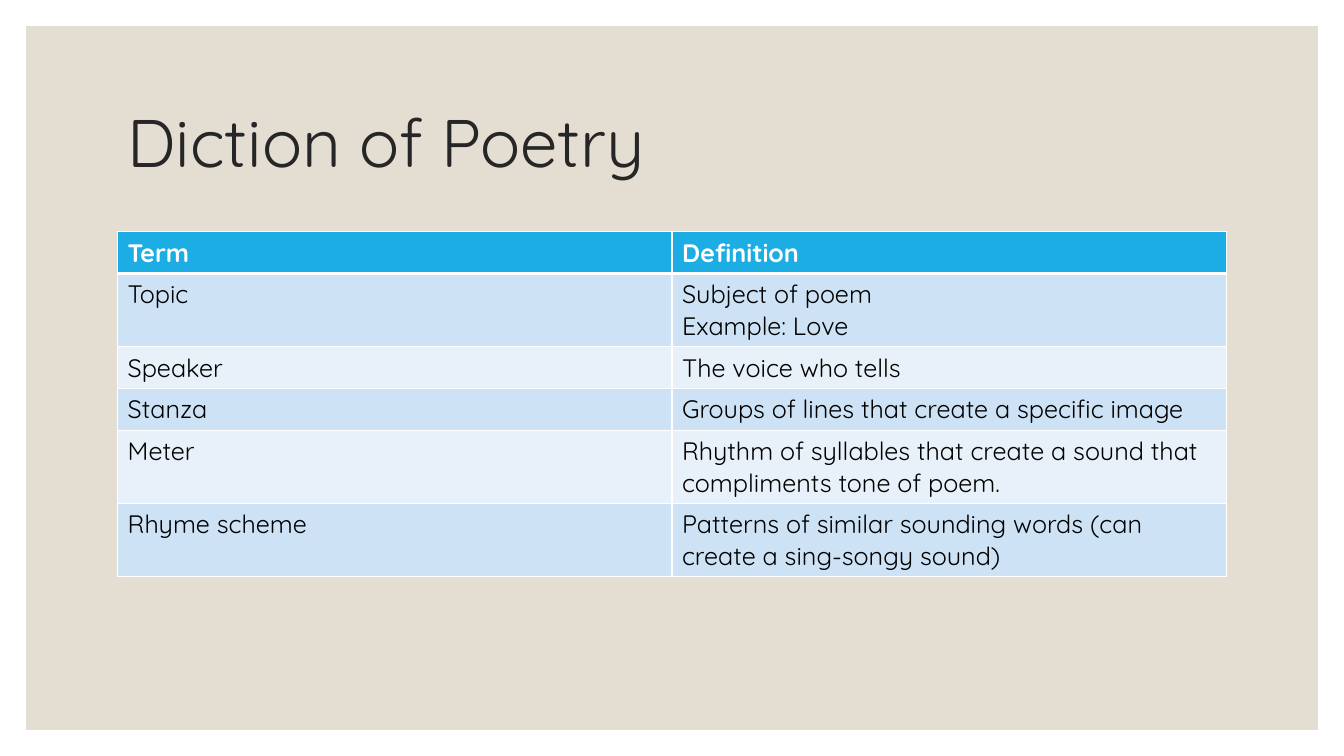
from lxml.etree import SubElement
from pptx import Presentation
from pptx.dml.color import RGBColor
from pptx.enum.shapes import MSO_SHAPE
from pptx.enum.text import MSO_ANCHOR, MSO_AUTO_SIZE, PP_ALIGN
from pptx.oxml.ns import qn
from pptx.util import Pt

FONT = "Quicksand"
WHITE = RGBColor(0xFF, 0xFF, 0xFF)
BLACK = RGBColor(0, 0, 0)
SAND = RGBColor(0xE3, 0xDE, 0xD1)
CHARCOAL = RGBColor(0x26, 0x26, 0x26)
BLUE = RGBColor(0x1C, 0xAD, 0xE4)
BAND_DARK = RGBColor(0xCD, 0xE3, 0xF5)
BAND_LIGHT = RGBColor(0xE8, 0xF1, 0xFA)

SLIDE_W, SLIDE_H = 960, 540
MARGIN = 18.7
LEFT, WIDTH = 84, 792
ROW_H = 29.2

# Each cell is a list of paragraphs
ROWS = [
    (["Term"], ["Definition"]),
    (["Topic"], ["Subject of poem", "Example: Love"]),
    (["Speaker"], ["The voice who tells"]),
    (["Stanza"], ["Groups of lines that create a specific image"]),
    (["Meter"], ["Rhythm of syllables that create a sound that "
                 "compliments tone of poem."]),
    (["Rhyme scheme"], ["Patterns of similar sounding words "
                        "(can create a sing-songy sound)"]),
]


def add_run(p, text, size, color, bold=False):
    r = p.add_run()
    r.text = text
    r.font.name = FONT
    r.font.size = Pt(size)
    r.font.bold = bold
    r.font.color.rgb = color


def add_panel(s):
    panel = s.shapes.add_shape(
        MSO_SHAPE.RECTANGLE, Pt(MARGIN), Pt(MARGIN),
        Pt(SLIDE_W - 2 * MARGIN), Pt(SLIDE_H - 2 * MARGIN))
    panel.shadow.inherit = False
    panel.fill.solid()
    panel.fill.fore_color.rgb = SAND
    panel.line.fill.background()
    # Place the panel behind the title
    s.shapes.title.element.addprevious(panel.element)


def set_title(s, text):
    title = s.shapes.title
    title.left, title.top = Pt(LEFT), Pt(50.4)
    title.width, title.height = Pt(WIDTH), Pt(108)
    tf = title.text_frame
    tf.auto_size = MSO_AUTO_SIZE.NONE
    tf.word_wrap = True
    tf.vertical_anchor = MSO_ANCHOR.MIDDLE
    p = tf.paragraphs[0]
    p.alignment = PP_ALIGN.LEFT
    p.line_spacing = 0.9
    add_run(p, text, 48, CHARCOAL)


def set_borders(cell, top, bottom):
    tc_pr = cell._tc.get_or_add_tcPr()
    for side, width in (("L", 1), ("R", 1), ("T", top), ("B", bottom)):
        ln = SubElement(tc_pr, qn(f"a:ln{side}"), w=str(Pt(width)))
        fill = SubElement(ln, qn("a:solidFill"))
        SubElement(fill, qn("a:srgbClr"), val=str(WHITE))


def fill_cell(cell, lines, row):
    header = row == 0
    set_borders(cell, top=3 if row == 1 else 1, bottom=3 if header else 1)
    cell.fill.solid()
    band = BAND_DARK if row % 2 else BAND_LIGHT
    cell.fill.fore_color.rgb = BLUE if header else band
    tf = cell.text_frame
    for i, line in enumerate(lines):
        p = tf.add_paragraph() if i else tf.paragraphs[0]
        add_run(p, line, 18, WHITE if header else BLACK, bold=header)


def add_terms_table(s):
    table = s.shapes.add_table(
        len(ROWS), len(ROWS[0]), Pt(LEFT), Pt(165.6),
        Pt(WIDTH), Pt(ROW_H * len(ROWS))).table
    for row, cells in enumerate(ROWS):
        for col, lines in enumerate(cells):
            fill_cell(table.cell(row, col), lines, row)


def main():
    prs = Presentation()
    prs.slide_width, prs.slide_height = Pt(SLIDE_W), Pt(SLIDE_H)
    s = prs.slides.add_slide(prs.slide_layouts[5])  # Title Only

    # Background panel and heading
    add_panel(s)
    set_title(s, "Diction of Poetry")

    # Terms and definitions
    add_terms_table(s)

    prs.save("out.pptx")


if __name__ == "__main__":
    main()
